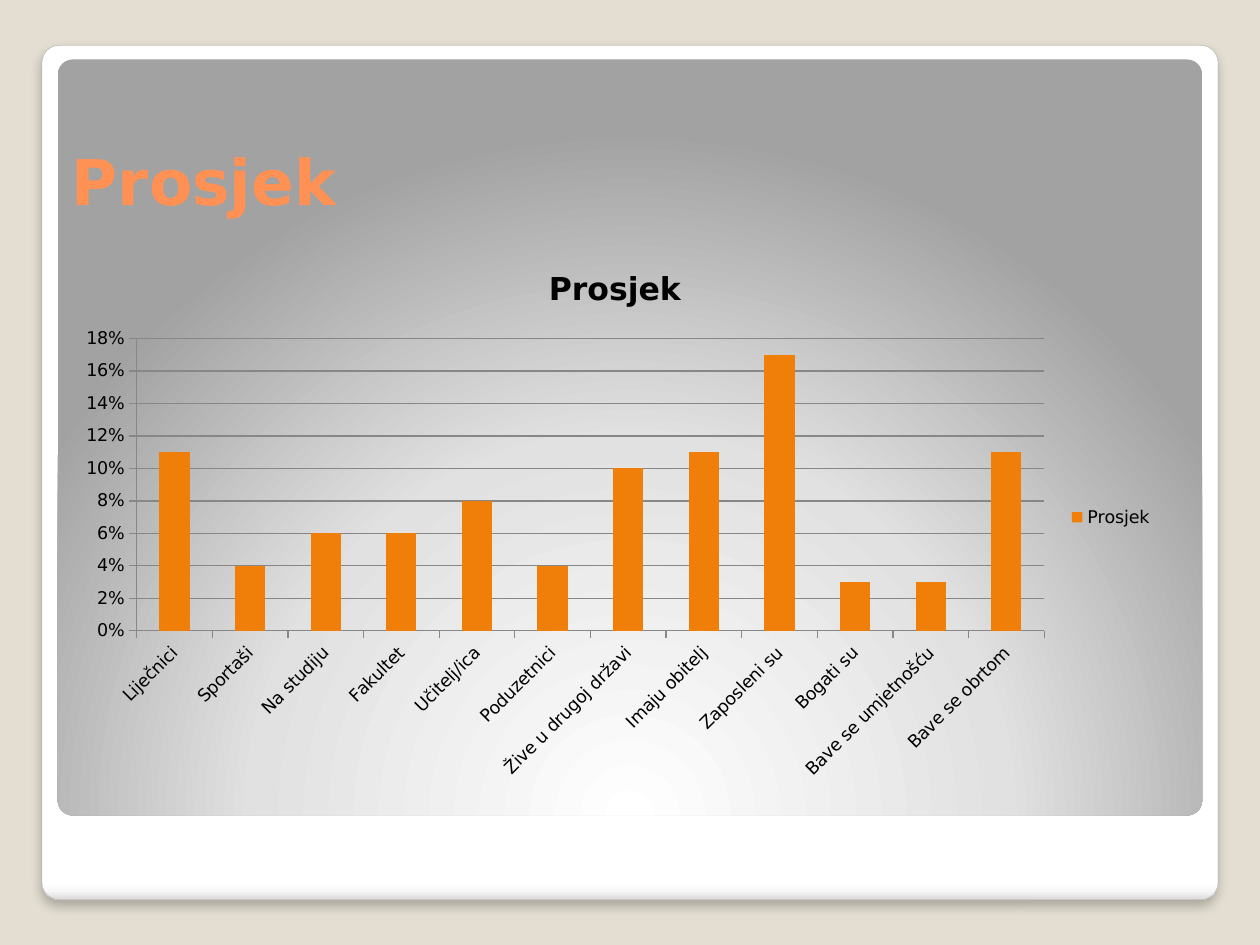
from lxml import etree
from pptx import Presentation
from pptx.chart.data import CategoryChartData
from pptx.dml.color import RGBColor
from pptx.enum import chart as ch, shapes, text
from pptx.oxml import ns
from pptx.util import Pt

FONT = "DejaVu Sans"
color = RGBColor.from_string


def set_gradient(shape, stops, direction):
    """Fill the shape with (percent, hex) stops; direction is the a:lin or a:path XML."""
    stop_xml = "".join(
        f'<a:gs pos="{percent * 1000}"><a:srgbClr val="{color(value)}"/></a:gs>'
        for percent, value in stops
    )
    gradient = etree.fromstring(
        f'<a:gradFill {ns.nsdecls("a")} rotWithShape="1">'
        f"<a:gsLst>{stop_xml}</a:gsLst>{direction}</a:gradFill>"
    )
    shape.fill.background()
    properties = shape.element.spPr
    properties.replace(properties.find(ns.qn("a:noFill")), gradient)


def write_text(frame, content, size, fill="000000", bold=False):
    paragraph = frame.paragraphs[0]
    run = paragraph.add_run()
    run.text = content
    run.font.name = FONT
    run.font.size = Pt(size)
    run.font.bold = bold
    run.font.color.rgb = color(fill)


presentation = Presentation()
presentation.slide_width, presentation.slide_height = Pt(720), Pt(540)
slide = presentation.slides.add_slide(presentation.slide_layouts[6])
slide.background.fill.solid()
slide.background.fill.fore_color.rgb = color("E3DED1")

# Card and inner panel
panels = []
for left, top, width, height in [(24, 25.9, 672, 488.2), (33, 34, 654, 432)]:
    panel = slide.shapes.add_shape(
        shapes.MSO_SHAPE.ROUNDED_RECTANGLE, Pt(left), Pt(top), Pt(width), Pt(height)
    )
    panel.adjustments[0] = 0.02
    panel.shadow.inherit = False
    panel.line.fill.background()
    panels.append(panel)
card, inner_panel = panels

set_gradient(
    card,
    [(0, "FFFFFF"), (98, "FFFFFF"), (99, "F7F7F7"), (100, "DADADA")],
    '<a:lin ang="5400000" scaled="0"/>',
)
card.line.color.rgb = color("A4A4A4")
card.line.width = Pt(0.16)
card.element.spPr.find(ns.qn("a:effectLst")).append(etree.fromstring(
    f'<a:outerShdw {ns.nsdecls("a")} blurRad="{Pt(6)}" dist="{Pt(4)}" dir="5400000" '
    'algn="tl" rotWithShape="0"><a:srgbClr val="000000"><a:alpha val="25000"/>'
    "</a:srgbClr></a:outerShdw>"
))
set_gradient(
    inner_panel,
    [(0, "FFFFFF"), (55, "E1E1E1"), (100, "A2A2A2")],
    '<a:path path="circle"><a:fillToRect l="50000" t="175000" r="50000" b="-75000"/></a:path>',
)

# Slide title
title_box = slide.shapes.add_textbox(Pt(34), Pt(48), Pt(640), Pt(80))
title_box.text_frame.word_wrap = True
title_box.text_frame.vertical_anchor = text.MSO_ANCHOR.BOTTOM
write_text(title_box.text_frame, "Prosjek", size=36, fill="FF9155", bold=True)

# Column chart
shares = {
    "Liječnici": 0.11,
    "Sportaši": 0.04,
    "Na studiju": 0.06,
    "Fakultet": 0.06,
    "Učitelj/ica": 0.08,
    "Poduzetnici": 0.04,
    "Žive u drugoj državi": 0.1,
    "Imaju obitelj": 0.11,
    "Zaposleni su": 0.17,
    "Bogati su": 0.03,
    "Bave se umjetnošću": 0.03,
    "Bave se obrtom": 0.11,
}
chart_data = CategoryChartData(number_format="0%")
chart_data.categories = list(shares)
chart_data.add_series("Prosjek", list(shares.values()))
chart = slide.shapes.add_chart(
    ch.XL_CHART_TYPE.COLUMN_CLUSTERED, Pt(36.7), Pt(139.7), Pt(629.3), Pt(311.8), chart_data
).chart
chart.font.name = FONT
chart.font.size = Pt(10)
chart.font.color.rgb = color("000000")

chart.has_title = True
write_text(chart.chart_title.text_frame, "Prosjek", size=18, bold=True)
chart.chart_title.include_in_layout = False

chart.has_legend = True
chart.legend.position = ch.XL_LEGEND_POSITION.RIGHT
chart.legend.include_in_layout = False

plot = chart.plots[0]
plot.gap_width = 150
plot.vary_by_categories = False
columns = plot.series[0]
columns.format.fill.solid()
columns.format.fill.fore_color.rgb = color("F07F09")

chart.value_axis.has_major_gridlines = True
chart.value_axis.tick_labels.number_format = "0%"
chart.value_axis.tick_labels.number_format_is_linked = False
for axis in (chart.category_axis, chart.value_axis):
    axis.major_tick_mark = ch.XL_TICK_MARK.OUTSIDE
for line_owner in (chart.category_axis, chart.value_axis, chart.value_axis.major_gridlines):
    line_owner.format.line.color.rgb = color("878787")
    line_owner.format.line.width = Pt(0.75)

presentation.save("out.pptx")
